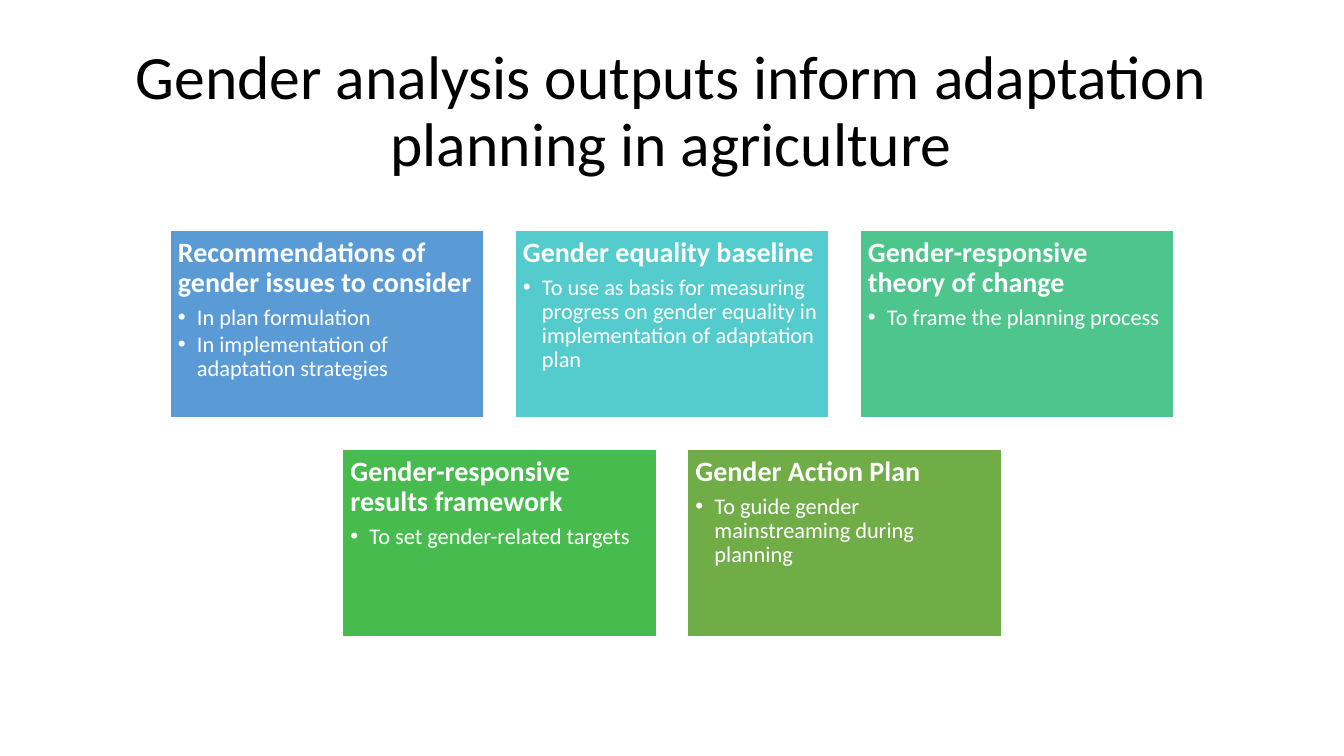
from lxml.etree import SubElement
from pptx import Presentation
from pptx.dml.color import RGBColor
from pptx.enum.shapes import MSO_SHAPE
from pptx.enum.text import MSO_ANCHOR, MSO_AUTO_SIZE, PP_ALIGN
from pptx.oxml.ns import qn
from pptx.util import Pt

PX = 914400 / 100.8
SLIDE_WIDTH, SLIDE_HEIGHT = 1344, 756
CARD_WIDTH, CARD_HEIGHT, CARD_GAP = 314, 188, 31
CARDS_TOP = 230
CARD_INSET = 8
BULLET_INDENT = 19

TITLE = "Gender analysis outputs inform adaptation planning in agriculture"
CARD_ROWS = [
    [
        ("5B9BD5", "Recommendations of gender issues to consider",
         ["In plan formulation", "In implementation of adaptation strategies"]),
        ("54CCCD", "Gender equality baseline",
         ["To use as basis for measuring progress on gender equality in "
          "implementation of adaptation plan"]),
        ("4DC58D", "Gender-responsive theory of change",
         ["To frame the planning process"]),
    ],
    [
        ("48BB4F", "Gender-responsive results framework",
         ["To set gender-related targets"]),
        ("70AD47", "Gender Action Plan",
         ["To guide gender mainstreaming during planning"]),
    ],
]


def px(length):
    return round(length * PX)


def color(hex_string):
    return RGBColor.from_string(hex_string)


def write(para, text, size, fill="FFFFFF", bold=False, align=PP_ALIGN.LEFT,
          space_after=0, bullet=False):
    para.alignment = align
    para.line_spacing = 0.9
    para.space_before = Pt(0)
    para.space_after = Pt(space_after)
    if bullet:
        add_bullet(para)
    span = para.add_run()
    span.text = text
    span.font.name = "Calibri"
    span.font.size = Pt(size)
    span.font.bold = bold
    span.font.color.rgb = color(fill)


def add_bullet(para):
    para.level = 1
    properties = para._p.get_or_add_pPr()
    properties.set("marL", str(px(BULLET_INDENT)))
    properties.set("indent", str(-px(BULLET_INDENT)))
    SubElement(properties, qn("a:buFont"), typeface="Arial")
    SubElement(properties, qn("a:buChar"), char="•")


def place_title(page, left, top, width, height):
    title = page.shapes.title
    title.left, title.top = px(left), px(top)
    title.width, title.height = px(width), px(height)
    frame = title.text_frame
    frame.word_wrap = True
    frame.auto_size = MSO_AUTO_SIZE.NONE
    frame.vertical_anchor = MSO_ANCHOR.MIDDLE
    write(frame.paragraphs[0], TITLE, 44, fill="000000", align=PP_ALIGN.CENTER)


def add_card(page, left, top, fill, heading, points):
    box = page.shapes.add_shape(MSO_SHAPE.RECTANGLE, px(left), px(top),
                                px(CARD_WIDTH), px(CARD_HEIGHT))
    box.shadow.inherit = False
    box.fill.solid()
    box.fill.fore_color.rgb = color(fill)
    box.line.color.rgb = color("FFFFFF")
    box.line.width = Pt(1)
    frame = box.text_frame
    frame.word_wrap = True
    frame.vertical_anchor = MSO_ANCHOR.TOP
    frame.margin_left = frame.margin_right = px(CARD_INSET)
    frame.margin_top = frame.margin_bottom = px(CARD_INSET)
    write(frame.paragraphs[0], heading, 20, bold=True, space_after=5.6)
    for point in points:
        write(frame.add_paragraph(), point, 16, space_after=1.9, bullet=True)


def add_card_rows(page, left, top, width):
    """Stack the rows of cards, each centred in the given width."""
    for row, cards in enumerate(CARD_ROWS):
        row_width = len(cards) * (CARD_WIDTH + CARD_GAP) - CARD_GAP
        row_left = left + (width - row_width) / 2
        row_top = top + row * (CARD_HEIGHT + CARD_GAP)
        for column, card in enumerate(cards):
            add_card(page, row_left + column * (CARD_WIDTH + CARD_GAP),
                     row_top, *card)


def main():
    deck = Presentation()
    deck.slide_width, deck.slide_height = px(SLIDE_WIDTH), px(SLIDE_HEIGHT)
    page = deck.slides.add_slide(deck.slide_layouts.get_by_name("Title Only"))
    place_title(page, 92, 40, 1159, 146)
    add_card_rows(page, 0, CARDS_TOP, SLIDE_WIDTH)
    deck.save("out.pptx")


if __name__ == "__main__":
    main()
